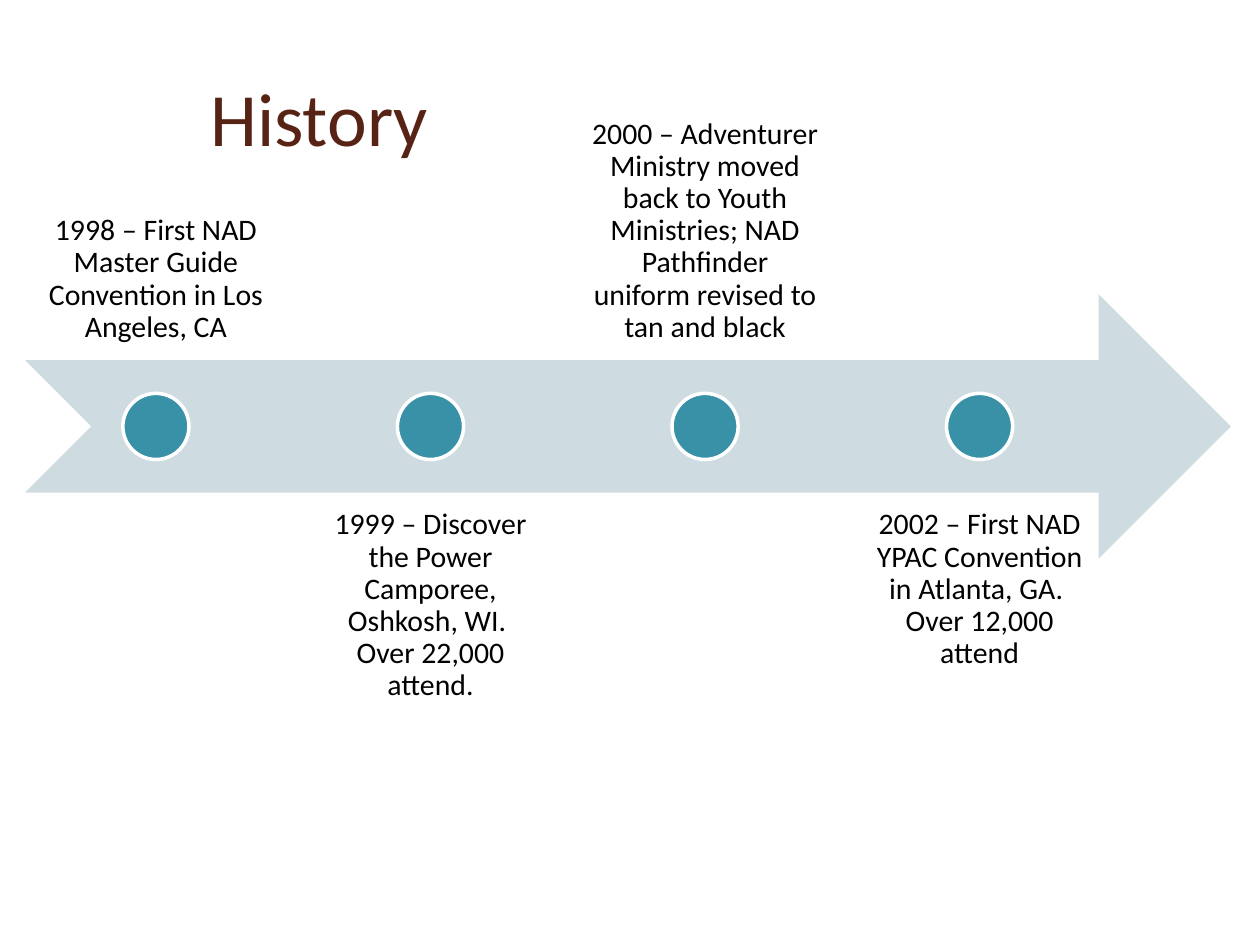
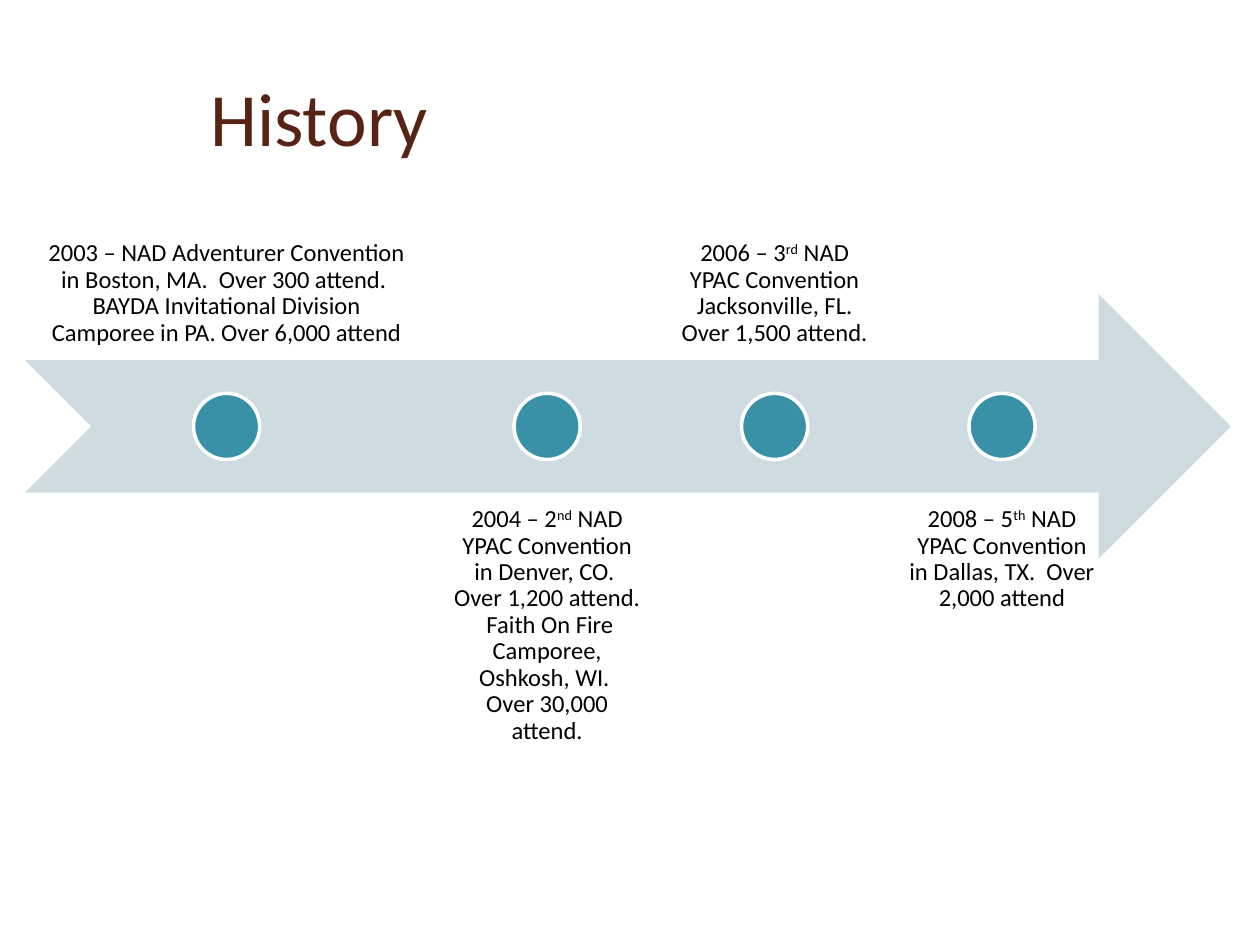
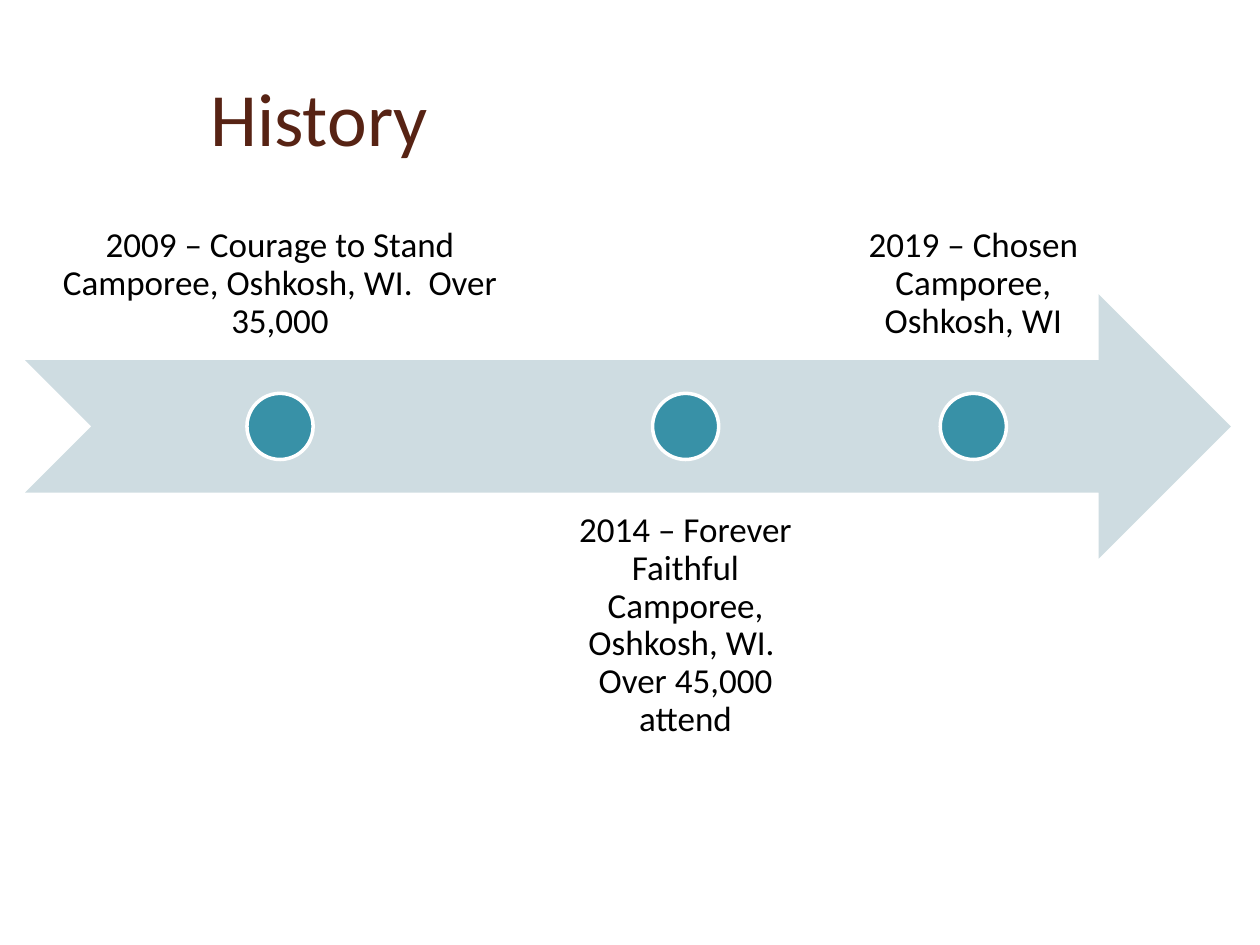
from pptx import Presentation
from pptx.dml.color import RGBColor
from pptx.enum.shapes import MSO_SHAPE
from pptx.enum.text import MSO_ANCHOR, PP_ALIGN
from pptx.util import Pt

ARROW, DOT = MSO_SHAPE.NOTCHED_RIGHT_ARROW, MSO_SHAPE.OVAL
TOP, MIDDLE, BOTTOM = MSO_ANCHOR.TOP, MSO_ANCHOR.MIDDLE, MSO_ANCHOR.BOTTOM
LEFT, CENTER = PP_ALIGN.LEFT, PP_ALIGN.CENTER

FONT = "Calibri"
COLORS = {"title": "572314", "text": "000000", "band": "CEDCE1",
          "dot": "3891A7", "ring": "FFFFFF"}
TITLE = (113, 21.6, 590.4, 90)
FRAME = (14.4, 54.7, 689, 378)
WIDE = 1.86  # width of a long first event, against the others

# Text size, width of the first event, events; ^ marks a superscript
SLIDES = [
    (17, 1, [
        "1998 – First NAD Master Guide Convention in Los Angeles, CA",
        "1999 – Discover the Power Camporee, Oshkosh, WI.  Over 22,000 attend.",
        "2000 – Adventurer Ministry moved back to Youth Ministries; "
        "NAD Pathfinder uniform revised to tan and black",
        "2002 – First NAD YPAC Convention in Atlanta, GA.  Over 12,000 attend",
    ]),
    (14, WIDE, [
        "2003 – NAD Adventurer Convention in Boston, MA.  Over 300 attend.  "
        "BAYDA Invitational Division Camporee in PA. Over 6,000 attend",
        "2004 – 2^nd^ NAD YPAC Convention in Denver, CO.  Over 1,200 attend.  "
        "Faith On Fire Camporee, Oshkosh, WI.  Over 30,000 attend.",
        "2006 – 3^rd^ NAD YPAC Convention Jacksonville, FL. Over 1,500 attend.",
        "2008 – 5^th^ NAD YPAC Convention in Dallas, TX.  Over 2,000 attend",
    ]),
    (20, WIDE, [
        "2009 – Courage to Stand Camporee, Oshkosh, WI.  Over 35,000",
        "2014 – Forever Faithful Camporee, Oshkosh, WI.  Over 45,000 attend",
        "2019 – Chosen Camporee, Oshkosh, WI",
    ]),
]


def paint(name):
    return RGBColor.from_string(COLORS[name])


def write(shape, text, size, color="text", align=CENTER, anchor=TOP,
          inset=None, spacing=None):
    """Fill a shape with one paragraph; parts between ^ are raised."""
    frame = shape.text_frame
    frame.word_wrap = True
    frame.vertical_anchor = anchor
    if inset is not None:
        frame.margin_left = frame.margin_right = Pt(inset)
        frame.margin_top = frame.margin_bottom = Pt(inset)
    para = frame.paragraphs[0]
    para.alignment = align
    para.line_spacing = spacing
    for i, part in enumerate(text.split("^")):
        run = para.add_run()
        run.text = part
        run.font.name = FONT
        run.font.size = Pt(size)
        run.font.color.rgb = paint(color)
        if i % 2:
            run.font._element.set("baseline", "30000")


def draw(slide, kind, box, fill, line=None):
    shape = slide.shapes.add_shape(kind, *map(Pt, box))
    shape.shadow.inherit = False
    shape.fill.solid()
    shape.fill.fore_color.rgb = paint(fill)
    if line:
        shape.line.color.rgb = paint(line)
        shape.line.width = Pt(2)
    else:
        shape.line.fill.background()


def add_title(slide, box, text):
    title = slide.shapes.title
    title.left, title.top, title.width, title.height = map(Pt, box)
    write(title, text, 43, color="title", align=LEFT, anchor=MIDDLE)


def add_events(slide, box, size, first, events):
    """Draw the arrow, with events in turn above and below it."""
    left, top, width, height = box
    band = 0.4 * height
    dot = band / 4
    draw(slide, ARROW, (left, top + 0.3 * height, width, band), "band")
    shares = [first] + [1] * (len(events) - 1)
    unit = 0.9 * width / (sum(shares) + 0.05 * (len(events) - 1))
    for i, (share, event) in enumerate(zip(shares, events)):
        wide = share * unit
        below = i % 2
        y = top + 0.6 * height * below
        label = slide.shapes.add_textbox(*map(Pt, (left, y, wide, band)))
        write(label, event, size, anchor=TOP if below else BOTTOM,
              inset=0.56 * size, spacing=0.9)
        draw(slide, DOT, (left + (wide - dot) / 2,
                          top + (height - dot) / 2, dot, dot), "dot", "ring")
        left += wide + 0.05 * unit


def main():
    deck = Presentation()
    deck.slide_width, deck.slide_height = Pt(720), Pt(540)
    for size, first, events in SLIDES:
        slide = deck.slides.add_slide(deck.slide_layouts[5])
        add_title(slide, TITLE, "History")
        add_events(slide, FRAME, size, first, events)
    deck.save("out.pptx")


if __name__ == "__main__":
    main()
